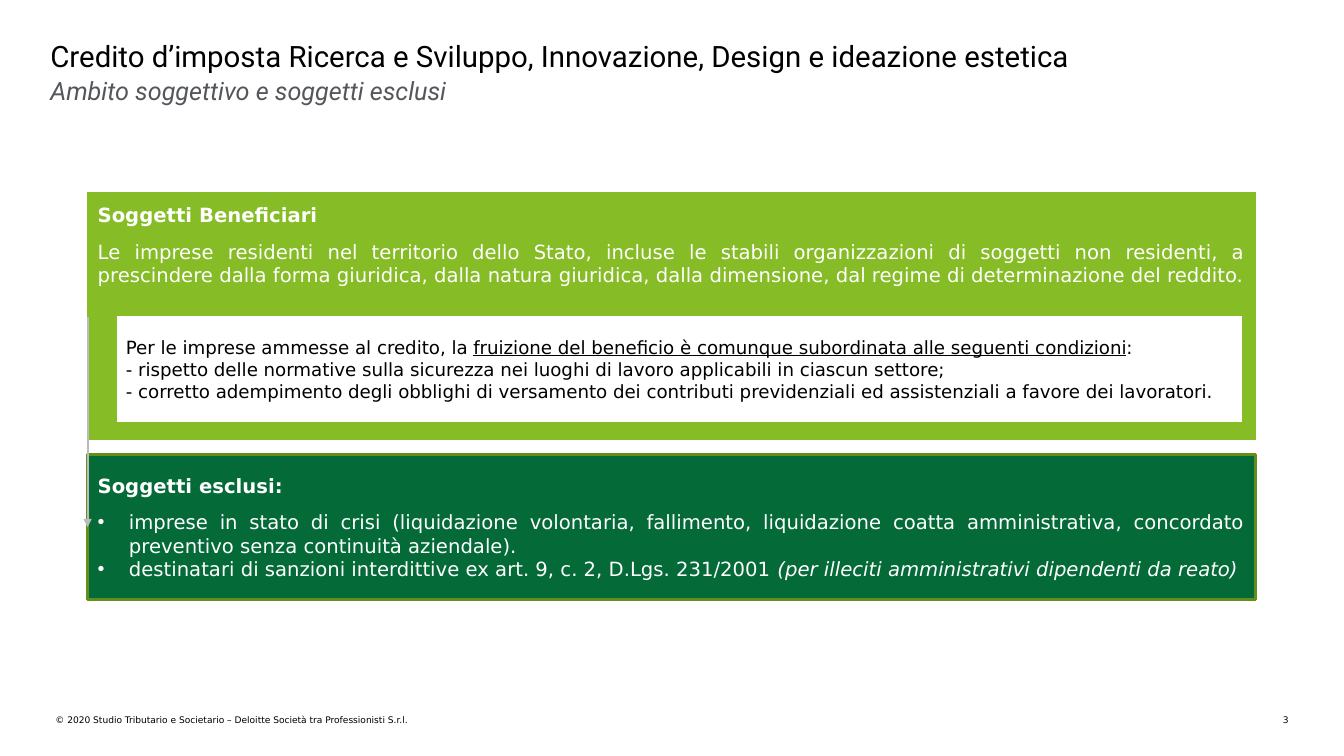
import dataclasses

import lxml.etree
import pptx
import pptx.dml.color
import pptx.enum.shapes
import pptx.enum.text
import pptx.oxml.ns
import pptx.util

Inches = pptx.util.Inches
Pt = pptx.util.Pt
Align = pptx.enum.text.PP_ALIGN
Anchor = pptx.enum.text.MSO_ANCHOR
qn = pptx.oxml.ns.qn


@dataclasses.dataclass(frozen=True)
class Theme:
    black: str = "000000"
    white: str = "FFFFFF"
    gray: str = "53565A"
    rule: str = "BBBCBC"
    lime: str = "86BC25"
    olive: str = "658D1C"
    green: str = "046A38"
    head: str = "Roboto"
    body: str = "DejaVu Sans"
    title: float = 21
    sub: float = 18
    text: float = 14
    note: float = 13
    foot: float = 6.5
    gap: float = 9.5


class Deck:
    """Holds the theme and the current slide, and draws each kind of element."""

    def __init__(self, theme):
        self.theme = theme
        self.file = pptx.Presentation()
        self.file.slide_width = Inches(13.33)
        self.file.slide_height = Inches(7.5)
        self.slide = self.file.slides.add_slide(self.file.slide_layouts[6])

    def color(self, code):
        return pptx.dml.color.RGBColor.from_string(code)

    def run(self, para, words, size, ink, face, bold=False, italic=False, under=False):
        run = para.add_run()
        run.text = words
        font = run.font
        font.name, font.size = face, Pt(size)
        font.bold, font.italic, font.underline = bold, italic, under
        font.color.rgb = self.color(ink)

    def bullet(self, para, ink):
        props = para._p.get_or_add_pPr()
        props.set("marL", str(Inches(0.31)))
        props.set("indent", str(Inches(-0.31)))
        tint = lxml.etree.SubElement(props, qn("a:buClr"))
        lxml.etree.SubElement(tint, qn("a:srgbClr"), val=ink)
        lxml.etree.SubElement(props, qn("a:buFont"), typeface="Arial")
        lxml.etree.SubElement(props, qn("a:buChar"), char="•")

    def label(self, box, words, size, ink, face, italic=False, align=Align.LEFT):
        frame = self.slide.shapes.add_textbox(*map(Inches, box)).text_frame
        frame.word_wrap = True
        frame.margin_left = frame.margin_right = 0
        frame.margin_top = frame.margin_bottom = 0
        para = frame.paragraphs[0]
        para.alignment = align
        self.run(para, words, size, ink, face, italic=italic)

    def panel(self, box, fill, edge, width, paras, size, ink, anchor=Anchor.MIDDLE):
        shape = self.slide.shapes.add_shape(
            pptx.enum.shapes.MSO_SHAPE.RECTANGLE, *map(Inches, box))
        shape.shadow.inherit = False
        shape.fill.solid()
        shape.fill.fore_color.rgb = self.color(fill)
        shape.line.color.rgb = self.color(edge)
        shape.line.width = Pt(width)
        frame = shape.text_frame
        frame.word_wrap = True
        frame.vertical_anchor = anchor
        frame.margin_left = frame.margin_right = Inches(0.1)
        frame.margin_top = frame.margin_bottom = Inches(0.1)
        for spot, (kind, runs) in enumerate(paras):
            para = frame.add_paragraph() if spot else frame.paragraphs[0]
            para.alignment = Align.JUSTIFY
            if kind == "head":
                para.space_after = Pt(self.theme.gap)
            if kind == "item":
                self.bullet(para, ink)
            for words, style in runs:
                self.run(para, words, size, ink, self.theme.body, **style)

    def link(self, start, end, bend):
        line = self.slide.shapes.add_connector(
            pptx.enum.shapes.MSO_CONNECTOR.ELBOW, *map(Inches, start + end))
        line.line.color.rgb = self.color(self.theme.rule)
        line.line.width = Pt(1.5)
        props = line.element.spPr
        frame = props.find(qn("a:xfrm"))
        for key, value in (("rot", "10800000"), ("flipH", "1"), ("flipV", "1")):
            frame.set(key, value)
        guides = props.find(qn("a:prstGeom")).find(qn("a:avLst"))
        lxml.etree.SubElement(guides, qn("a:gd"), name="adj1", fmla=f"val {bend}")
        lxml.etree.SubElement(props.find(qn("a:ln")), qn("a:tailEnd"), type="triangle")
        lxml.etree.SubElement(props, qn("a:effectLst"))

    def save(self):
        self.file.save("out.pptx")


def main():
    theme = Theme()
    deck = Deck(theme)
    left, width = 0.87, 11.58
    bold, italic, under = {"bold": True}, {"italic": True}, {"under": True}

    deck.label((12.44, 7.09, 0.34, 0.11), "3", theme.foot, theme.black, theme.body,
               align=Align.RIGHT)
    deck.label((0.55, 7.09, 5.86, 0.11),
               "© 2020 Studio Tributario e Societario – Deloitte Società tra Professionisti S.r.l.",
               theme.foot, theme.black, theme.body)
    deck.panel((left, 1.91, width, 2.45), theme.lime, theme.lime, 0.75, [
        ("head", [("Soggetti Beneficiari", bold)]),
        ("text", [("Le imprese residenti nel territorio dello Stato, incluse le stabili "
                   "organizzazioni di soggetti non residenti, a prescindere dalla forma "
                   "giuridica, dalla natura giuridica, dalla dimensione, dal regime di "
                   "determinazione del reddito.", {})]),
    ], theme.text, theme.white, Anchor.TOP)
    deck.panel((left, 4.51, width, 1.44), theme.green, theme.olive, 2, [
        ("head", [("Soggetti esclusi:", bold)]),
        ("item", [("imprese in stato di crisi (liquidazione volontaria, fallimento, "
                   "liquidazione coatta amministrativa, concordato preventivo senza "
                   "continuità aziendale).", {})]),
        ("item", [("destinatari di sanzioni interdittive ex art. 9, c. 2, D.Lgs. 231/2001 ", {}),
                  ("(per illeciti amministrativi dipendenti da reato)", italic)]),
    ], theme.text, theme.white)
    deck.link((left, 3.14), (left, 5.23), -114300)
    deck.panel((1.15, 3.12, 11.18, 1.08), theme.white, theme.lime, 2, [
        ("text", [("Per le imprese ammesse al credito, la ", {}),
                  ("fruizione del beneficio è comunque subordinata alle seguenti condizioni",
                   under),
                  (":", {})]),
        ("text", [("- rispetto delle normative sulla sicurezza nei luoghi di lavoro "
                   "applicabili in ciascun settore;", {})]),
        ("text", [("- corretto adempimento degli obblighi di versamento dei contributi "
                   "previdenziali ed assistenziali a favore dei lavoratori.", {})]),
    ], theme.note, theme.black)
    deck.label((0.5, 0.75, 12.36, 0.83), "Ambito soggettivo e soggetti esclusi",
               theme.sub, theme.gray, theme.head, italic=True)
    deck.label((0.5, 0.38, 12.36, 0.37),
               "Credito d’imposta Ricerca e Sviluppo, Innovazione, Design e ideazione estetica",
               theme.title, theme.black, theme.head)
    deck.save()


if __name__ == "__main__":
    main()
